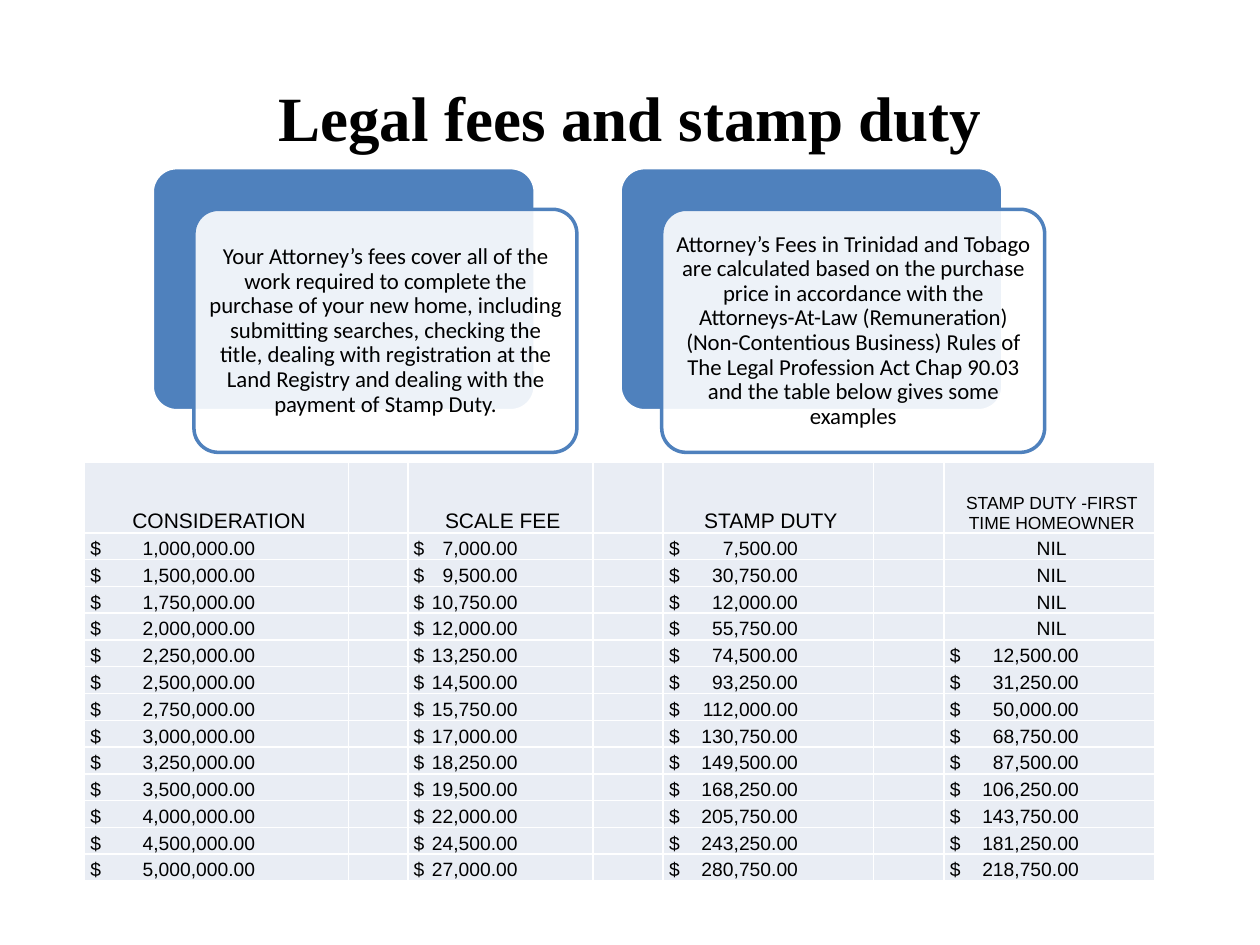
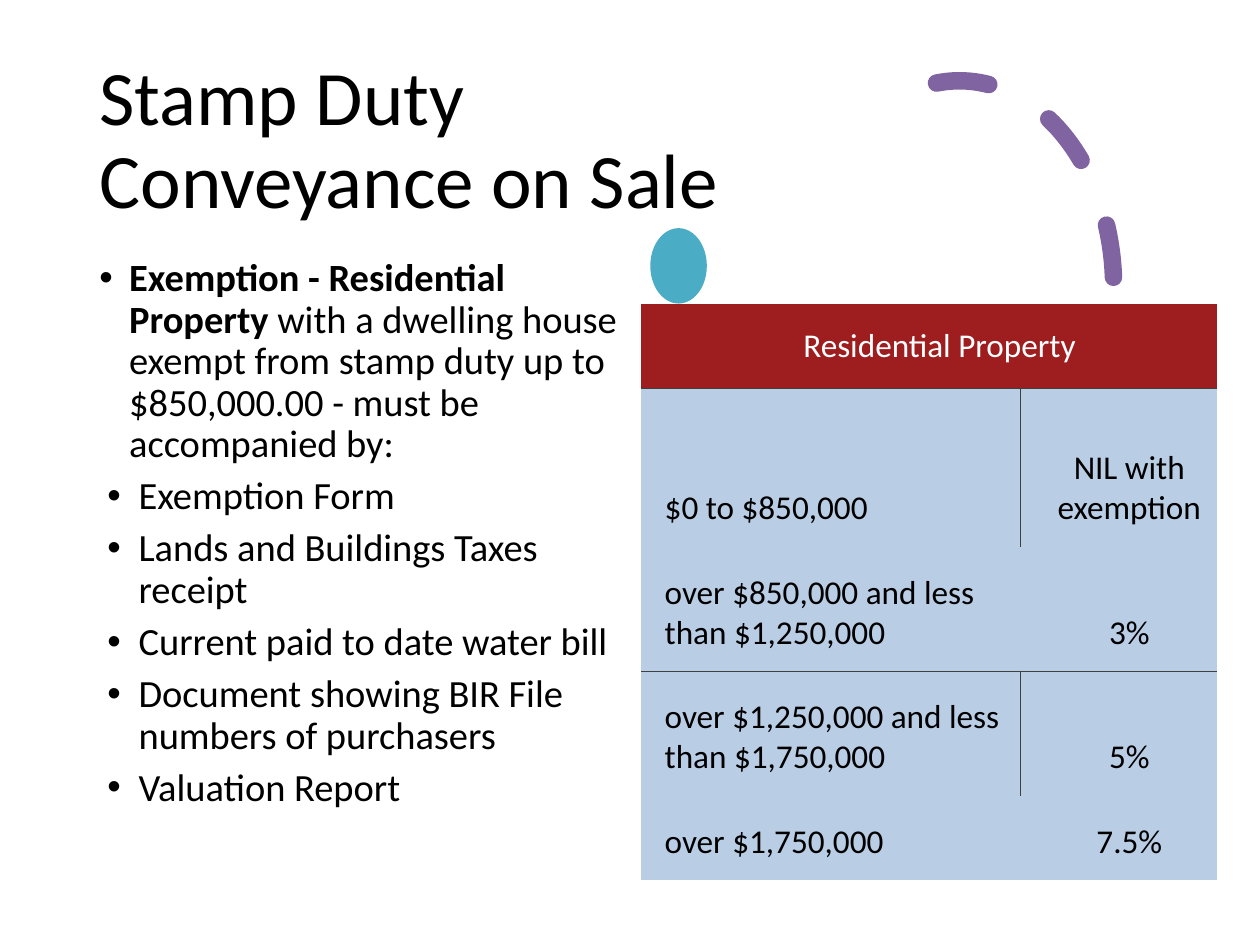
from lxml.etree import SubElement
from pptx import Presentation
from pptx.dml.color import RGBColor
from pptx.enum.dml import MSO_LINE
from pptx.enum.shapes import MSO_SHAPE
from pptx.enum.text import MSO_ANCHOR, MSO_AUTO_SIZE, PP_ALIGN
from pptx.oxml.ns import qn
from pptx.util import Cm, Pt

HUES = {
    "text": "000000", "white": "FFFFFF", "blue": "4F81BD", "pale": "E9EDF4",
    "sky": "B9CDE5", "red": "9E1E20", "rule": "404040", "plum": "8064A2",
    "teal": "4BACC6",
}
LEFT, MID = PP_ALIGN.LEFT, PP_ALIGN.CENTER


class Deck:
    """Holds the shared style and the current slide."""

    def __init__(self):
        self.show = Presentation()
        self.show.slide_width, self.show.slide_height = Cm(25.4), Cm(19.05)
        self.slide = None

    def start(self, layout):
        self.slide = self.show.slides.add_slide(self.show.slide_layouts[layout])

    def hue(self, name):
        return RGBColor.from_string(HUES[name])

    def style(self, para, size, face="Calibri", hue="text", align=LEFT, bold=None):
        para.alignment = align
        font = para.font
        font.size, font.name, font.bold = Pt(size), face, bold
        font.color.rgb = self.hue(hue)

    def place(self, item, box):
        item.left, item.top, item.width, item.height = map(Cm, box)

    def title(self, lines, box, size, space=1.0, **look):
        head = self.slide.shapes.title
        self.place(head, box)
        frame = head.text_frame
        frame.auto_size = MSO_AUTO_SIZE.NONE
        frame.vertical_anchor = MSO_ANCHOR.MIDDLE
        para = frame.paragraphs[0]
        for i, line in enumerate(lines):
            if i:
                para.add_line_break()
            para.add_run().text = line
        para.line_spacing = space
        self.style(para, size, **look)

    def bullets(self, items, box, size):
        """Each item is a list of (text, bold) runs; the first is less indented."""
        body = self.slide.placeholders[1]
        self.place(body, box)
        frame = body.text_frame
        frame.auto_size = MSO_AUTO_SIZE.NONE
        for i, runs in enumerate(items):
            para = frame.add_paragraph() if i else frame.paragraphs[0]
            props = para._p.get_or_add_pPr()
            props.set("marL", str(Cm(0.79 if i else 0.6)))
            props.set("indent", str(Cm(-0.63 if i else -0.6)))
            SubElement(props, qn("a:buFont"), typeface="Arial")
            SubElement(props, qn("a:buChar"), char="•")
            for text, bold in runs:
                run = para.add_run()
                run.text = text
                if bold:
                    run.font.bold = True
            para.line_spacing = 0.9
            para.space_before, para.space_after = Pt(0), Pt(6)
            self.style(para, size)

    def shape(self, kind, box, fill=None, line=None, width=2):
        item = self.slide.shapes.add_shape(kind, *map(Cm, box))
        item.shadow.inherit = False
        if fill:
            item.fill.solid()
            item.fill.fore_color.rgb = self.hue(fill)
        else:
            item.fill.background()
        if line:
            item.line.color.rgb = self.hue(line)
            item.line.width = Pt(width)
        else:
            item.line.fill.background()
        return item

    def card(self, left, top, text):
        """A blue plate with a translucent text panel set off from it."""
        wide, high, step = 7.72, 4.9, 0.84
        plate = self.shape(MSO_SHAPE.ROUNDED_RECTANGLE, (left, top, wide, high),
                           "blue", "white")
        panel = self.shape(MSO_SHAPE.ROUNDED_RECTANGLE,
                           (left + step, top + step, wide, high), "white", "blue")
        for item in (plate, panel):
            item.adjustments[0] = 0.1
        tint = panel.fill._xPr.find(qn("a:solidFill"))[0]
        SubElement(tint, qn("a:alpha"), val="90000")
        frame = panel.text_frame
        frame.word_wrap = True
        frame.vertical_anchor = MSO_ANCHOR.MIDDLE
        frame.margin_left = frame.margin_right = Cm(0.13)
        frame.margin_top = frame.margin_bottom = Cm(0.13)
        para = frame.paragraphs[0]
        para.text = text
        para.line_spacing = 0.9
        self.style(para, 13, align=MID)

    def arc(self, box, start, end):
        item = self.shape(MSO_SHAPE.ARC, box, line="plum", width=10)
        item.adjustments[0], item.adjustments[1] = start, end
        item.line.dash_style = MSO_LINE.DASH
        item.line._get_or_add_ln().set("cap", "rnd")

    def table(self, left, top, cols, rows):
        box = map(Cm, (left, top, sum(cols), sum(rows)))
        grid = self.slide.shapes.add_table(len(rows), len(cols), *box).table
        grid.first_row = grid.horz_banding = False
        for col, width in zip(grid.columns, cols):
            col.width = Cm(width)
        for row, height in zip(grid.rows, rows):
            row.height = Cm(height)
        return grid

    def cell(self, cell, text, fill, pads, sides, line, width, size,
             anchor=MSO_ANCHOR.BOTTOM, tab=None, **look):
        """Sides names the drawn borders, out of L, R, T and B."""
        props = cell._tc.get_or_add_tcPr()
        for side in "LRTB":
            edge = SubElement(props, qn("a:ln" + side), w=str(Pt(width)))
            if side in sides:
                paint = SubElement(edge, qn("a:solidFill"))
                SubElement(paint, qn("a:srgbClr"), val=HUES[line])
            else:
                SubElement(edge, qn("a:noFill"))
        cell.fill.solid()
        cell.fill.fore_color.rgb = self.hue(fill)
        cell.vertical_anchor = anchor
        (cell.margin_left, cell.margin_top,
         cell.margin_right, cell.margin_bottom) = map(Cm, pads)
        para = cell.text_frame.paragraphs[0]
        if text:
            para.text = text
        if tab:
            stops = SubElement(para._p.get_or_add_pPr(), qn("a:tabLst"))
            SubElement(stops, qn("a:tab"), pos=str(Cm(tab)), algn="r")
        self.style(para, size, **look)


def fees(deck):
    deck.start(5)
    deck.title(["Legal fees and stamp duty"], (1.27, 0.76, 22.86, 3.18), 36,
               face="Times New Roman", align=MID, bold=True)

    # Cards
    notes = [
        "Your Attorney’s fees cover all of the work required to complete the "
        "purchase of your new home, including submitting searches, checking the "
        "title, dealing with registration at the Land Registry and dealing with "
        "the payment of Stamp Duty.",
        "Attorney’s Fees in Trinidad and Tobago are calculated based on the "
        "purchase price in accordance with the Attorneys-At-Law (Remuneration) "
        "(Non-Contentious Business) Rules of The Legal Profession Act Chap 90.03 "
        "and the table below gives some examples",
    ]
    for i, note in enumerate(notes):
        deck.card(3.07 + 9.43 * i, 3.38, note)

    # Fee table: every second column is a spacer
    heads = ["CONSIDERATION", "SCALE FEE", "STAMP DUTY",
             "STAMP DUTY -FIRST TIME HOMEOWNER"]
    rows = [
        (1000000, 7000, 7500, None), (1500000, 9500, 30750, None),
        (1750000, 10750, 12000, None), (2000000, 12000, 55750, None),
        (2250000, 13250, 74500, 12500), (2500000, 14500, 93250, 31250),
        (2750000, 15750, 112000, 50000), (3000000, 17000, 130750, 68750),
        (3250000, 18250, 149500, 87500), (3500000, 19500, 168250, 106250),
        (4000000, 22000, 205750, 143750), (4500000, 24500, 243250, 181250),
        (5000000, 27000, 280750, 218750),
    ]
    tabs = [3.33, 2.1, 2.6, 2.6]
    look = dict(fill="pale", pads=(0.12, 0.02, 0.02, 0), sides="LRTB",
                line="white", width=1, face="Arial")
    grid = deck.table(1.7, 9.32, [5.33, 1.19, 3.73, 1.42, 4.24, 1.42, 4.24],
                      [1.42] + [0.54] * len(rows))
    for r in range(len(rows) + 1):
        for c in range(1, 7, 2):
            deck.cell(grid.cell(r, c), "", size=11, **look)
    for c, head in enumerate(heads):
        deck.cell(grid.cell(0, 2 * c), head, size=10 if c == 3 else 12,
                  align=MID, **look)
    for r, row in enumerate(rows, 1):
        for c, sum_due in enumerate(row):
            spot = grid.cell(r, 2 * c)
            if sum_due is None:
                deck.cell(spot, "NIL", size=11, align=MID, **look)
            else:
                deck.cell(spot, f"$\t{sum_due:,}.00", size=11, tab=tabs[c], **look)


def duty(deck):
    deck.start(1)

    # Dashed arc, title and list
    deck.arc((16.23, 1.63, 6.22, 8.31), 158.17, 17.81)
    deck.title(["Stamp Duty", "Conveyance on Sale"], (1.75, 1.02, 21.9, 3.68),
               44, space=0.9)
    papers = ["Exemption Form", "Lands and Buildings Taxes receipt",
              "Current paid to date water bill",
              "Document showing BIR File numbers of purchasers",
              "Valuation Report"]
    lead = [("Exemption - Residential Property ", True),
            ("with a dwelling house exempt from stamp duty up to $850,000.00 "
             "- must be accompanied by:", False)]
    deck.bullets([lead] + [[(paper, False)] for paper in papers],
                 (1.75, 5.08, 11.23, 12.09), 22)
    deck.shape(MSO_SHAPE.OVAL, (13.11, 4.6, 1.14, 1.52), "teal")

    # Rate table: the text and borders of each band
    bands = [
        ("$0 to $850,000", "NIL with exemption", "TR", "TL"),
        ("over $850,000 and less than $1,250,000", "3%", "B", "B"),
        ("over $1,250,000 and less than $1,750,000", "5%", "TR", "TL"),
        ("over $1,750,000", "7.5%", "", ""),
    ]
    look = dict(pads=(0.48, 0.36, 0.05, 0.36), line="rule", width=0.5, size=19)
    grid = deck.table(12.92, 6.12, [7.65, 3.96], [1.7, 3.2, 2.51, 2.51, 1.7])
    grid.cell(0, 0).merge(grid.cell(0, 1))
    deck.cell(grid.cell(0, 0), "Residential Property", "red", sides="B",
              anchor=MSO_ANCHOR.MIDDLE, hue="white", align=MID, **look)
    for r, (span, rate, near, far) in enumerate(bands, 1):
        deck.cell(grid.cell(r, 0), span, "sky", sides=near, **look)
        deck.cell(grid.cell(r, 1), rate, "sky", sides=far, align=MID, **look)


def main():
    deck = Deck()
    fees(deck)
    duty(deck)
    deck.show.save("out.pptx")


if __name__ == "__main__":
    main()
